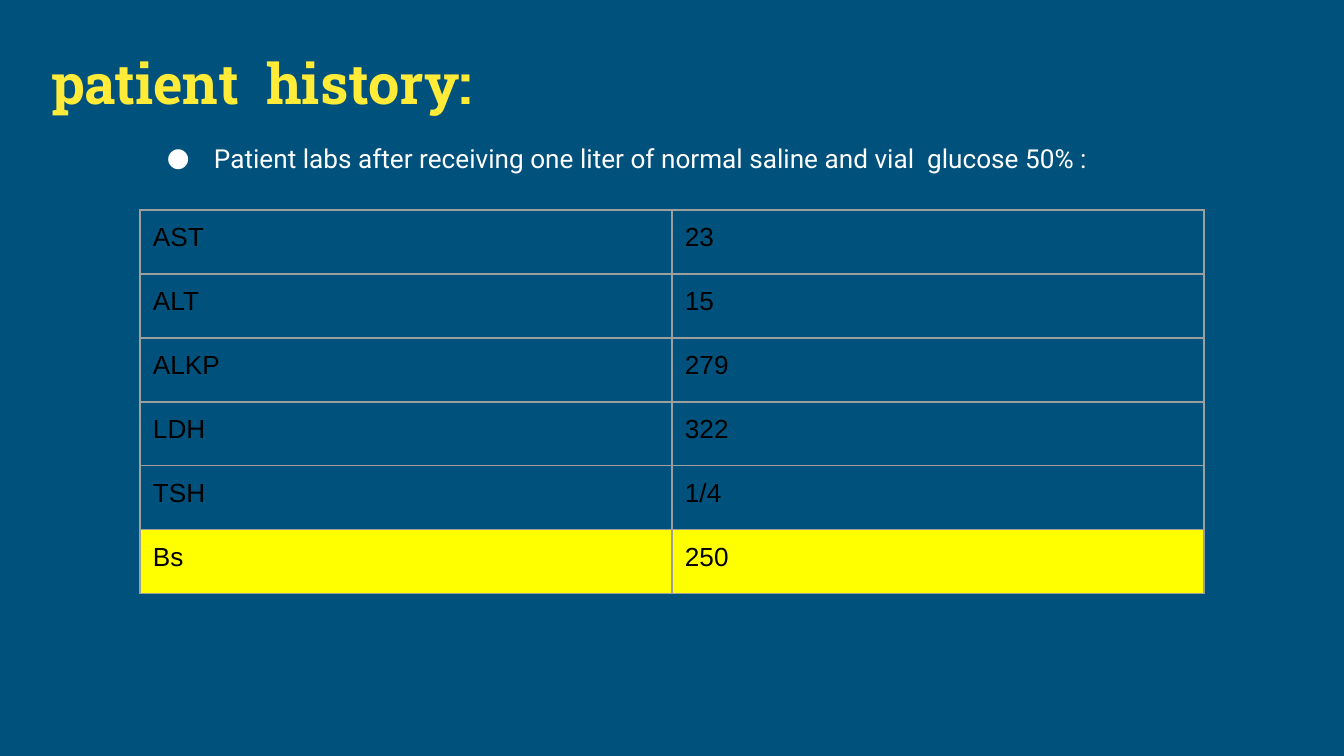
from lxml import etree
from pptx import Presentation
from pptx import util as u
from pptx.dml.color import RGBColor
from pptx.enum import text
from pptx.oxml import ns

SCALE = 914400 / 134.4
INSET = 13
COLORS = {
    "background": "00517C",
    "title": "FFEB38",
    "body": "FFFFFF",
    "cell": "000000",
    "border": "9E9E9E",
    "highlight": "FFFF00",
}
LABS = [
    ("AST", "23"),
    ("ALT", "15"),
    ("ALKP", "279"),
    ("LDH", "322"),
    ("TSH", "1/4"),
    ("Bs", "250"),
]
HIGHLIGHTED = "Bs"


def px(length):
    return u.Emu(round(length * SCALE))


def color(name):
    return RGBColor.from_string(COLORS[name])


def add_node(parent, tag, **attributes):
    node = etree.SubElement(parent, ns.qn(tag))
    for name, value in attributes.items():
        node.set(name, str(value))
    return node


def set_insets(item):
    item.margin_left = item.margin_right = px(INSET)
    item.margin_top = item.margin_bottom = px(INSET)


def style(para, font, size, color_name, bold=False):
    para.alignment = text.PP_ALIGN.LEFT
    para.font.name = font
    para.font.size = u.Pt(size)
    para.font.bold = bold
    para.font.color.rgb = color(color_name)


def set_title(page, words):
    title = page.shapes.title
    title.left, title.top, title.width, title.height = map(px, (38, 28, 1230, 101))
    frame = title.text_frame
    frame.text = words
    frame.auto_size = text.MSO_AUTO_SIZE.NONE
    frame.vertical_anchor = text.MSO_ANCHOR.BOTTOM
    set_insets(frame)
    style(frame.paragraphs[0], "Roboto Slab", 30, "title", bold=True)


def add_bullet(page, words):
    box = page.shapes.add_textbox(*map(px, (134, 129, 1075, 58)))
    frame = box.text_frame
    frame.word_wrap = True
    frame.auto_size = text.MSO_AUTO_SIZE.SHAPE_TO_FIT_TEXT
    set_insets(frame)
    para = frame.paragraphs[0]
    para.text = words
    properties = para._p.get_or_add_pPr()
    properties.set("marL", str(px(67)))
    properties.set("indent", str(px(-47)))
    bullet_color = add_node(properties, "a:buClr")
    add_node(bullet_color, "a:srgbClr", val=COLORS["body"])
    add_node(properties, "a:buFont", typeface="Roboto")
    add_node(properties, "a:buChar", char="●")
    style(para, "Roboto", 14, "body")


def set_borders(cell):
    properties = cell._tc.get_or_add_tcPr()
    for side in ("a:lnL", "a:lnR", "a:lnT", "a:lnB"):
        line = add_node(properties, side, w=u.Pt(0.75))
        fill = add_node(line, "a:solidFill")
        add_node(fill, "a:srgbClr", val=COLORS["border"])


def fill_cell(cell, words, highlighted):
    cell.text = words
    set_insets(cell)
    set_borders(cell)
    if highlighted:
        cell.fill.solid()
        cell.fill.fore_color.rgb = color("highlight")
    else:
        cell.fill.background()
    style(cell.text_frame.paragraphs[0], "Arial", 14, "cell")


def add_lab_table(page, labs):
    area = map(px, (140, 210, 1064, 64 * len(labs)))
    table = page.shapes.add_table(len(labs), 2, *area).table
    table.first_row = table.horz_banding = False
    for row, lab in zip(table.rows, labs):
        for cell, words in zip(row.cells, lab):
            fill_cell(cell, words, lab[0] == HIGHLIGHTED)


def main():
    deck = Presentation()
    deck.slide_width, deck.slide_height = px(1344), px(756)
    page = deck.slides.add_slide(deck.slide_layouts[5])
    page.background.fill.solid()
    page.background.fill.fore_color.rgb = color("background")
    set_title(page, "patient  history:")
    add_bullet(
        page,
        "Patient labs after receiving one liter of normal saline and vial  glucose 50% :",
    )
    add_lab_table(page, LABS)
    deck.save("out.pptx")


if __name__ == "__main__":
    main()
